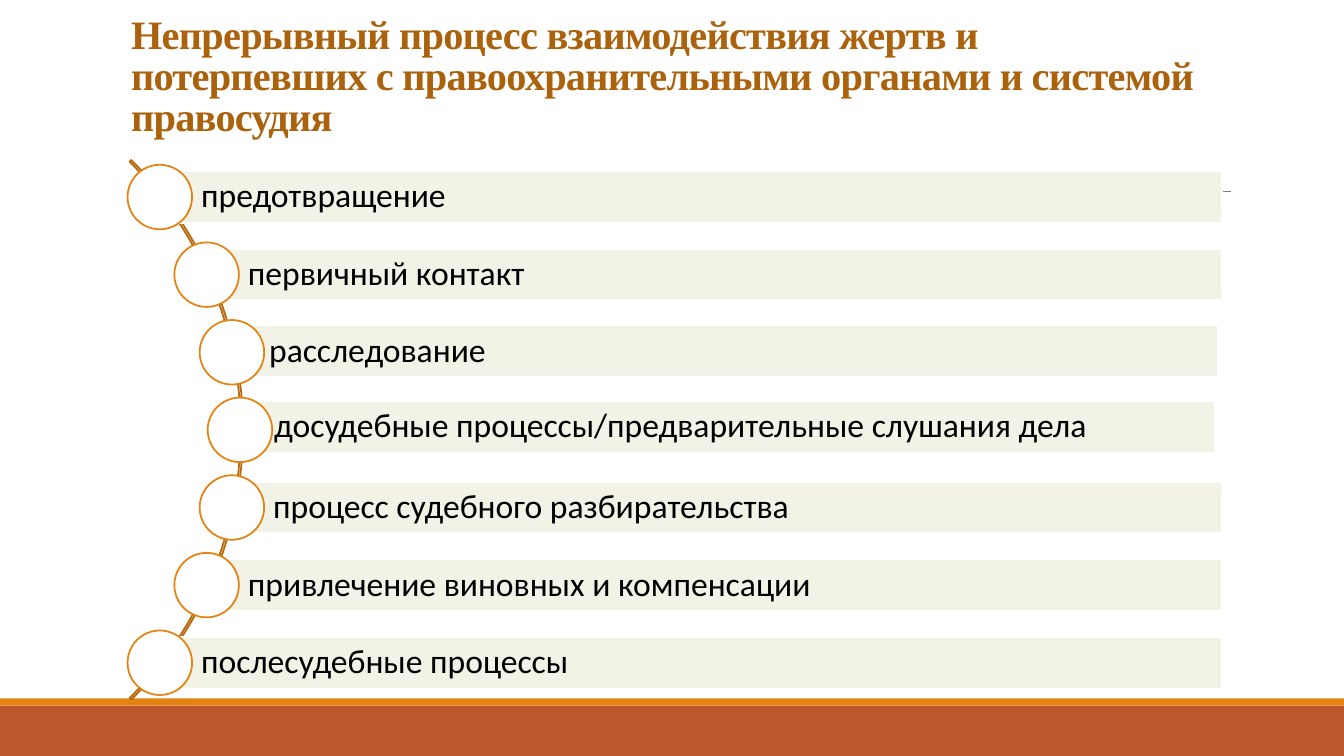
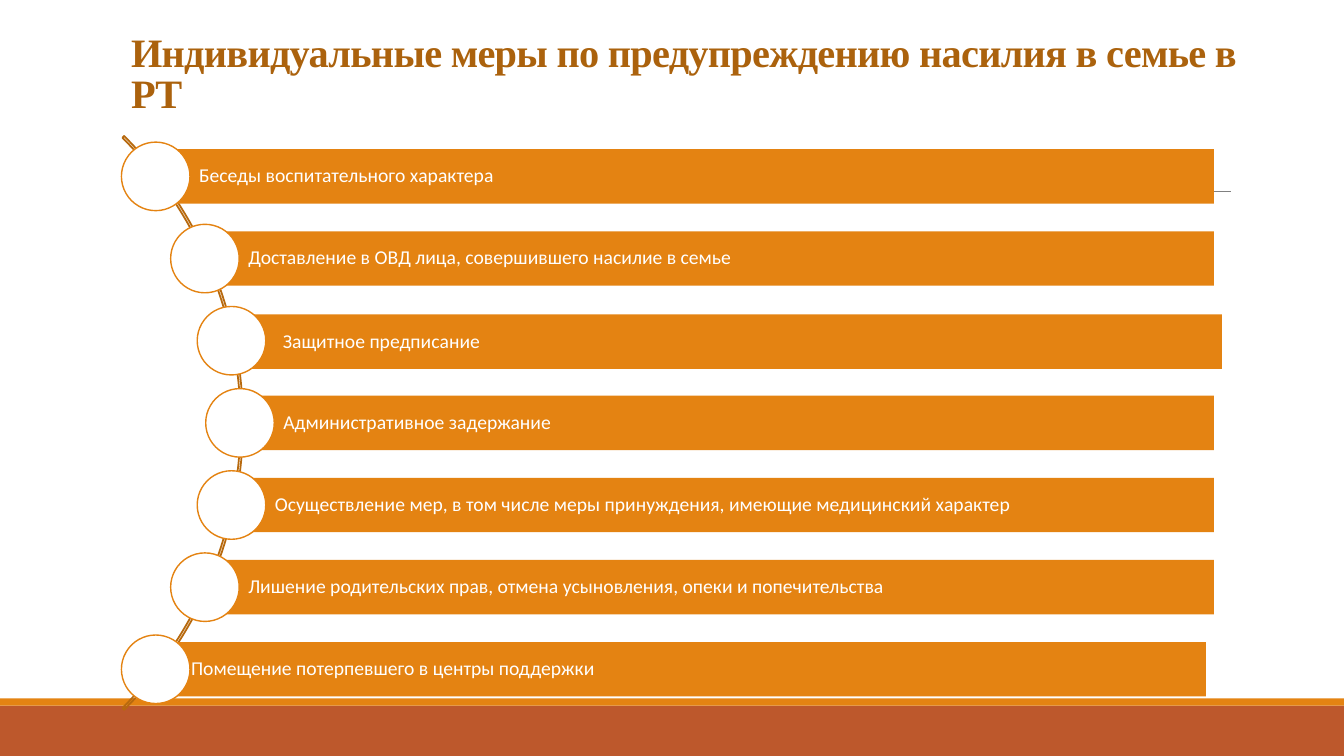
from dataclasses import dataclass
from math import sqrt

from lxml import etree
from pptx import Presentation
from pptx import util as u
from pptx.dml.color import RGBColor
from pptx.enum import shapes, text
from pptx.oxml import ns


@dataclass(frozen=True)
class Theme:
    """Page size, colours, fonts and type sizes shared by the slides."""
    width: float = 13.33
    height: float = 7.5
    white: str = "FFFFFF"
    black: str = "000000"
    rust: str = "BD582C"
    orange: str = "E48312"
    arc: str = "B7690E"
    title: str = "AB620D"
    cream: str = "F3F2E6"
    rule: str = "808080"
    title_font: str = "Times New Roman"
    body_font: str = "Calibri"
    title_size: float = 28.8


T = Theme()


@dataclass(frozen=True)
class ArcList:
    """Geometry and look of a list whose bars start along an arc."""
    arc_left: float
    arc_top: float
    arc_size: float
    step: float
    dot: float
    bar: float
    right: float
    fill: str
    bar_line: str
    dot_line: float
    color: str
    size: float
    inset: float
    pad: float


STAGES = ArcList(-5.16, 0.48, 7.57, 0.77, 0.64, 0.51, 12.12, T.cream,
                 T.white, 1.25, T.black, 24, 0.41, 0.07)
MEASURES = ArcList(-5.64, 0.17, 8.05, 0.815, 0.68, 0.54, 12.04, T.orange,
                   "", 1, T.white, 14, 0.43, 0.04)


def rgb(color):
    """Turn a hex string into a colour."""
    return RGBColor.from_string(color)


def add_shape(slide, kind, box, fill="", line="", weight=1.25):
    """Add a preset shape without shadow; an empty colour means none."""
    sp = slide.shapes.add_shape(kind, *map(u.Inches, box))
    sp.shadow.inherit = False
    if fill:
        sp.fill.solid()
        sp.fill.fore_color.rgb = rgb(fill)
    else:
        sp.fill.background()
    if line:
        sp.line.color.rgb = rgb(line)
        sp.line.width = u.Pt(weight)
    else:
        sp.line.fill.background()
    return sp


def write(tf, content, font, size, color, spacing, bold=False):
    """Write one left-aligned run and return it."""
    tf.word_wrap = True
    p = tf.paragraphs[0]
    p.alignment = text.PP_ALIGN.LEFT
    p.line_spacing = spacing
    r = p.add_run()
    r.text = content
    r.font.name = font
    r.font.size = u.Pt(size)
    r.font.bold = bold
    r.font.color.rgb = rgb(color)
    return r


def add_frame(slide):
    """Draw the footer bands and the rule, then move them to the layout."""
    rect = shapes.MSO_SHAPE.RECTANGLE
    band = add_shape(slide, rect, (0, 7, T.width, 0.5), T.rust)
    strip = add_shape(slide, rect, (0, 6.93, T.width, 0.07), T.orange)
    rule = slide.shapes.add_connector(
        shapes.MSO_CONNECTOR.STRAIGHT,
        *map(u.Inches, (1.31, 1.9, 12.21, 1.9)))
    rule.line.color.rgb = rgb(T.rule)
    rule.line.width = u.Pt(0.5)
    etree.SubElement(rule.element.spPr, ns.qn("a:effectLst"))
    tree = slide.slide_layout.shapes.element
    for sp in (band, strip, rule):
        tree.append(sp.element)


def set_title(slide, content, bottom, width):
    """Place and format the title so that it stands on its bottom edge."""
    sp = slide.shapes.title
    top = 0.1
    sp.left, sp.top, sp.width, sp.height = map(
        u.Inches, (1.2, top, width, bottom - top))
    tf = sp.text_frame
    tf.auto_size = text.MSO_AUTO_SIZE.NONE
    tf.vertical_anchor = text.MSO_ANCHOR.BOTTOM
    r = write(tf, content, T.title_font, T.title_size, T.title, 0.85, True)
    r.font._element.set("spc", "-50")


def add_bar(slide, look, content, x, y, dx, dy):
    """Add a labelled bar from x to the right edge, shifted by dx and dy."""
    sp = add_shape(slide, shapes.MSO_SHAPE.RECTANGLE,
                   (x + dx, y + dy - look.bar / 2, look.right - x, look.bar),
                   look.fill, look.bar_line)
    tf = sp.text_frame
    tf.vertical_anchor = text.MSO_ANCHOR.MIDDLE
    tf.margin_left = u.Inches(look.inset)
    tf.margin_top = tf.margin_right = tf.margin_bottom = u.Inches(look.pad)
    write(tf, content, T.body_font, look.size, look.color, 0.9)


def add_arc_list(slide, look, items, shifts):
    """Draw the arc and, along it, one bar and one circle per item."""
    arc = add_shape(slide, shapes.MSO_SHAPE.BLOCK_ARC,
                    (look.arc_left, look.arc_top, look.arc_size, look.arc_size),
                    line=T.arc)
    for i, value in enumerate((189, 27, 0.003)):
        arc.adjustments[i] = value
    radius = look.arc_size / 2
    track = radius - 0.03
    for i, content in enumerate(items):
        offset = (i - (len(items) - 1) / 2) * look.step
        x = look.arc_left + radius + sqrt(track ** 2 - offset ** 2)
        y = look.arc_top + radius + offset
        add_bar(slide, look, content, x, y, *shifts.get(i, (0, 0)))
        add_shape(slide, shapes.MSO_SHAPE.OVAL,
                  (x - look.dot / 2, y - look.dot / 2, look.dot, look.dot),
                  T.white, T.orange, look.dot_line)


def main():
    """Build and save the presentation."""
    prs = Presentation()
    prs.slide_width, prs.slide_height = u.Inches(T.width), u.Inches(T.height)
    layout = prs.slide_layouts[5]

    s = prs.slides.add_slide(layout)
    add_frame(s)
    set_title(s, "Непрерывный процесс взаимодействия жертв и потерпевших с "
                 "правоохранительными органами и системой правосудия", 1.44, 11)
    add_arc_list(s, STAGES, (
        "предотвращение",
        "первичный контакт",
        "расследование",
        "досудебные процессы/предварительные слушания дела",
        "процесс судебного разбирательства",
        "привлечение виновных и компенсации",
        "послесудебные процессы",
    ), {2: (-0.04, -0.01), 3: (-0.07, -0.03)})

    s = prs.slides.add_slide(layout)
    set_title(s, "Индивидуальные меры по предупреждению насилия в семье в РТ",
              1.21, 11.43)
    add_arc_list(s, MEASURES, (
        "Беседы воспитательного характера",
        "Доставление в ОВД лица, совершившего насилие в семье",
        "Защитное предписание",
        "Административное задержание",
        "Осуществление мер, в том числе меры принуждения, "
        "имеющие медицинский характер",
        "Лишение родительских прав, отмена усыновления, "
        "опеки и попечительства",
        "Помещение потерпевшего в центры поддержки",
    ), {2: (0.08, 0.01), 6: (-0.08, 0)})

    prs.save("out.pptx")


if __name__ == "__main__":
    main()
